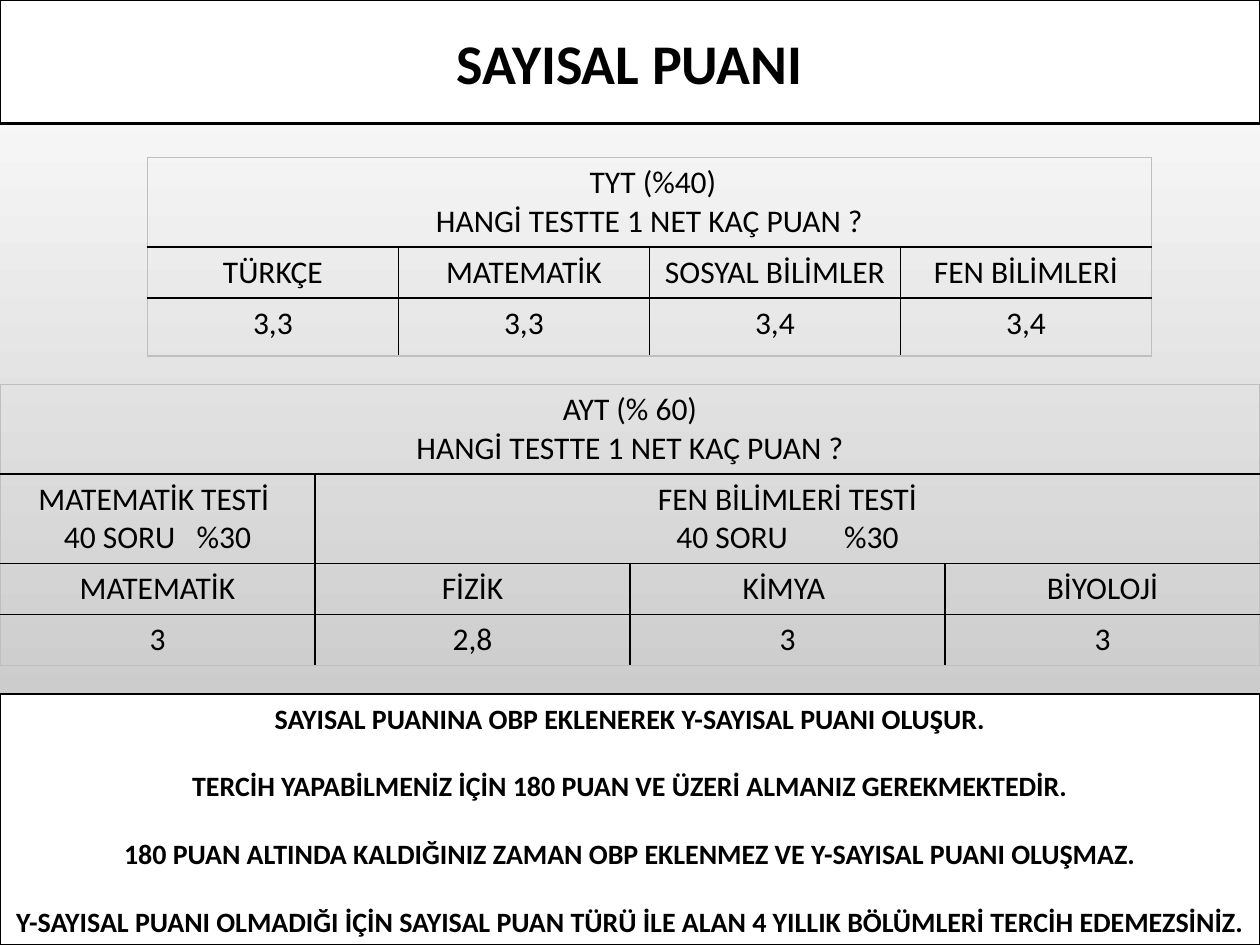
from dataclasses import dataclass
from lxml.etree import SubElement
from pptx import Presentation
from pptx.dml.color import RGBColor
from pptx.enum.shapes import MSO_SHAPE
from pptx.enum.text import MSO_ANCHOR, PP_ALIGN
from pptx.oxml import parse_xml
from pptx.oxml.ns import nsdecls, qn
from pptx.util import Inches, Pt


@dataclass(frozen=True)
class Theme:
    font: str = "Calibri"
    ink: str = "000000"
    paper: str = "FFFFFF"
    shade: str = "B9B9B9"
    edge: str = "BFBFBF"
    title: float = 32
    table: float = 18
    note: float = 16
    note_gap: float = 19.5
    panel_line: float = 1.25
    grid_line: float = 1


@dataclass(frozen=True)
class Cell:
    text: str
    span: int = 1
    gap: float = 0


@dataclass(frozen=True)
class Grid:
    left: float
    top: float
    width: float
    heights: tuple[float, ...]
    rows: tuple[tuple[Cell, ...], ...]
    cols: int = 4


T = Theme()
QUESTION = "HANGİ TESTTE 1 NET KAÇ PUAN ?"


def cells(*texts: str) -> tuple[Cell, ...]:
    return tuple(Cell(text) for text in texts)


TYT = Grid(1.17, 1.25, 7.97, (0.7, 0.4, 0.46), (
    (Cell(f" TYT (%40)\n{QUESTION}", span=4),),
    cells("TÜRKÇE", "MATEMATİK", "SOSYAL BİLİMLER", "FEN BİLİMLERİ"),
    cells("3,3", "3,3", "3,4", "3,4"),
))
AYT = Grid(0, 3.05, 10, (0.7, 0.7, 0.4, 0.4), (
    (Cell(f"AYT (% 60)\n{QUESTION}", span=4),),
    (Cell("MATEMATİK TESTİ \n40 SORU %30", gap=8),
     Cell("FEN BİLİMLERİ TESTİ\n40 SORU %30", span=3, gap=28)),
    cells("MATEMATİK", "FİZİK", "KİMYA ", "BİYOLOJİ"),
    cells("3", "2,8", "3", "3"),
))
NOTES = (
    "SAYISAL PUANINA OBP EKLENEREK Y-SAYISAL PUANI OLUŞUR.",
    "TERCİH YAPABİLMENİZ İÇİN 180 PUAN VE ÜZERİ ALMANIZ GEREKMEKTEDİR.",
    "180 PUAN ALTINDA KALDIĞINIZ ZAMAN OBP EKLENMEZ VE Y-SAYISAL PUANI OLUŞMAZ.",
    "Y-SAYISAL PUANI OLMADIĞI İÇİN SAYISAL PUAN TÜRÜ İLE ALAN 4 YILLIK "
    "BÖLÜMLERİ TERCİH EDEMEZSİNİZ.",
)


def write(tf, text: str, *, size: float, bold: bool = False,
          space: float = 0, gap: float = 0) -> None:
    for i, line in enumerate(text.split("\n")):
        p = tf.paragraphs[0] if i == 0 else tf.add_paragraph()
        p.alignment = PP_ALIGN.CENTER
        if i and space:
            p.space_before = Pt(space)
        before, mark, after = line.partition(" %") if gap else (line, "", "")
        parts = (before, " ", "%" + after) if mark else (line,)
        for part in parts:
            r = p.add_run()
            r.text = part
            r.font.name, r.font.size, r.font.bold = T.font, Pt(size), bold
            r.font.color.rgb = RGBColor.from_string(T.ink)
            if part == " ":
                r.font._element.set("spc", str(int(gap * 100)))


def add_panel(slide, top: float, height: float, text: str, *,
              size: float, space: float = 0) -> None:
    sp = slide.shapes.add_shape(MSO_SHAPE.RECTANGLE, Inches(0), Inches(top),
                                Inches(10), Inches(height))
    sp.shadow.inherit = False
    sp.fill.solid()
    sp.fill.fore_color.rgb = RGBColor.from_string(T.paper)
    sp.line.color.rgb = RGBColor.from_string(T.ink)
    sp.line.width = Pt(T.panel_line)
    tf = sp.text_frame
    tf.word_wrap = True
    tf.vertical_anchor = MSO_ANCHOR.MIDDLE
    write(tf, text, size=size, bold=True, space=space)


def set_borders(cell, colors: dict[str, str | None]) -> None:
    tc_pr = cell._tc.get_or_add_tcPr()
    for i, (side, color) in enumerate(colors.items()):
        ln = parse_xml(f'<a:ln{side} {nsdecls("a")} w="{Pt(T.grid_line)}"/>')
        if color:
            fill = SubElement(ln, qn("a:solidFill"))
            SubElement(fill, qn("a:srgbClr")).set("val", color)
        else:
            SubElement(ln, qn("a:noFill"))
        tc_pr.insert(i, ln)


def add_grid(slide, grid: Grid) -> None:
    n = len(grid.rows)
    table = slide.shapes.add_table(
        n, grid.cols, Inches(grid.left), Inches(grid.top),
        Inches(grid.width), Inches(sum(grid.heights))).table
    table.first_row = table.horz_banding = False
    for col in table.columns:
        col.width = Inches(grid.width / grid.cols)
    for y, (height, row) in enumerate(zip(grid.heights, grid.rows)):
        table.rows[y].height = Inches(height)
        x = 0
        for item in row:
            end = x + item.span
            origin = table.cell(y, x)
            if item.span > 1:
                origin.merge(table.cell(y, end - 1))
            write(origin.text_frame, item.text, size=T.table, gap=item.gap)
            right = T.edge if end == grid.cols else T.ink
            for c in range(x, end):
                cell = table.cell(y, c)
                cell.fill.background()
                set_borders(cell, {
                    "L": None if c > x else T.ink if x else T.edge,
                    "R": right if c in (x, end - 1) else None,
                    "T": T.ink if y else T.edge,
                    "B": T.ink if y < n - 1 else T.edge,
                })
            x = end


def main() -> None:
    prs = Presentation()
    prs.slide_width, prs.slide_height = Inches(10), Inches(7.5)
    slide = prs.slides.add_slide(prs.slide_layouts[6])
    bg = slide.background.fill
    bg.gradient()
    bg.gradient_angle = 270
    for stop, color, pos in zip(bg.gradient_stops, (T.paper, T.shade), (0, 1)):
        stop.color.rgb = RGBColor.from_string(color)
        stop.position = pos
    add_panel(slide, 0, 0.98, "SAYISAL PUANI", size=T.title)
    for grid in (TYT, AYT):
        add_grid(slide, grid)
    add_panel(slide, 5.51, 1.99, "\n".join(NOTES), size=T.note, space=T.note_gap)
    prs.save("out.pptx")


if __name__ == "__main__":
    main()
